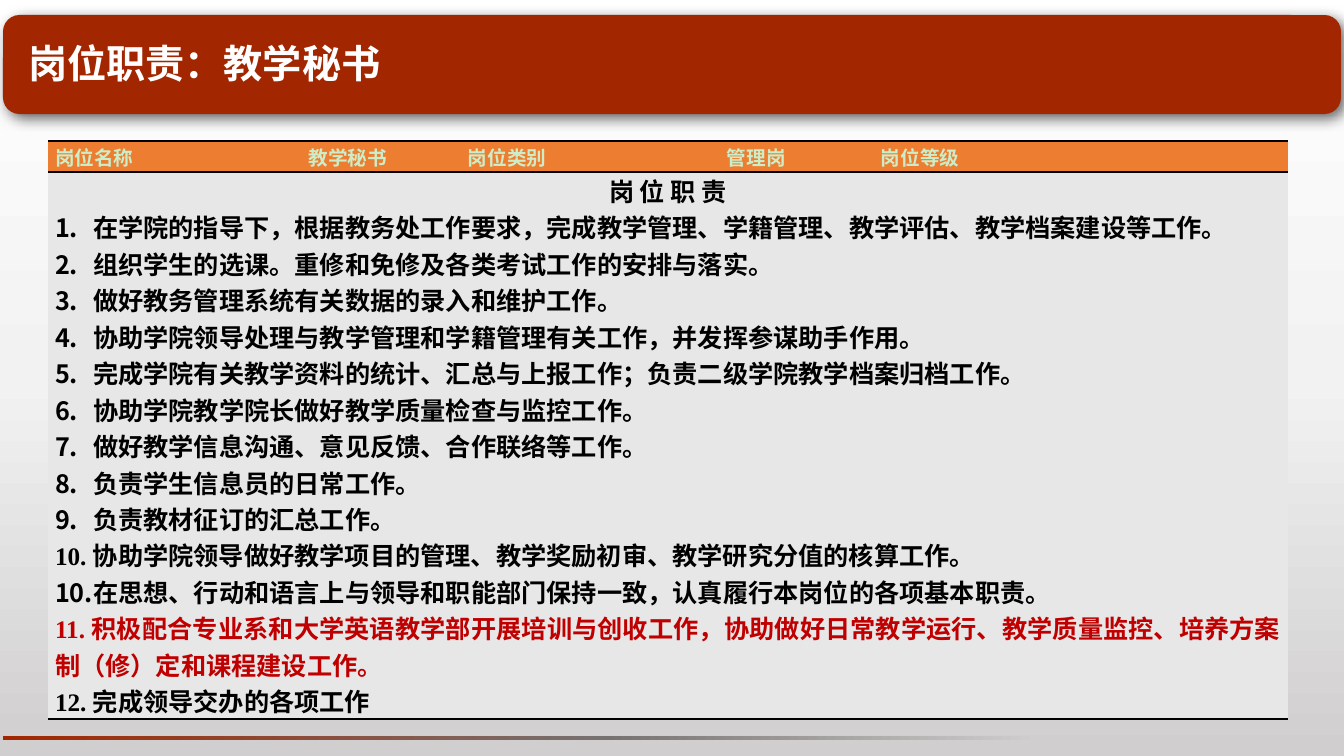
from lxml import etree
from pptx import Presentation
from pptx import util as u
from pptx.dml.color import RGBColor
from pptx.enum import shapes, text
from pptx.oxml import ns

PX = u.Emu(12192000) / 1344
SANS, SERIF = "Noto Sans CJK SC", "Times New Roman"
BRICK = RGBColor(0xA2, 0x27, 0x00)
ORANGE = RGBColor(0xED, 0x7D, 0x31)
MINT = RGBColor(0xCC, 0xED, 0xC7)
PALE = RGBColor(0xE7, 0xE7, 0xE7)
RED = RGBColor(0xC0, 0x00, 0x00)
BLACK = RGBColor(0x00, 0x00, 0x00)
WHITE = RGBColor(0xFF, 0xFF, 0xFF)
MIST = RGBColor(0xF2, 0xF2, 0xF2)
GREY = RGBColor(0x76, 0x71, 0x71)
SILVER = RGBColor(0xD0, 0xCE, 0xCE)
NO_STYLE = "{2D5ABB26-0587-4C30-8999-92F81FD0307C}"
LEFT, CENTER, JUSTIFY = text.PP_ALIGN.LEFT, text.PP_ALIGN.CENTER, text.PP_ALIGN.JUSTIFY

COLUMNS = [187, 226, 178, 235, 186, 228]
HEADER = ["岗位名称", "教学秘书", "岗位类别", "管理岗", "岗位等级", ""]
DUTIES = [
    "在学院的指导下，根据教务处工作要求，完成教学管理、学籍管理、教学评估、教学档案建设等工作。",
    "组织学生的选课。重修和免修及各类考试工作的安排与落实。",
    "做好教务管理系统有关数据的录入和维护工作。",
    "协助学院领导处理与教学管理和学籍管理有关工作，并发挥参谋助手作用。",
    "完成学院有关教学资料的统计、汇总与上报工作；负责二级学院教学档案归档工作。",
    "协助学院教学院长做好教学质量检查与监控工作。",
    "做好教学信息沟通、意见反馈、合作联络等工作。",
    "负责学生信息员的日常工作。",
    "负责教材征订的汇总工作。",
]
# Text, number the list starts at (None for a typed number), colour
CLOSING_DUTIES = [
    ("10. 协助学院领导做好教学项目的管理、教学奖励初审、教学研究分值的核算工作。", None, BLACK),
    ("在思想、行动和语言上与领导和职能部门保持一致，认真履行本岗位的各项基本职责。", 10, BLACK),
    ("11. 积极配合专业系和大学英语教学部开展培训与创收工作，协助做好日常教学运行、"
     "教学质量监控、培养方案制（修）定和课程建设工作。", None, RED),
    ("12. 完成领导交办的各项工作", None, BLACK),
]


def px(length):
    return u.Emu(round(length * PX))


def add_xml(parent, tag, **attributes):
    child = etree.SubElement(parent, ns.qn(tag))
    for name, value in attributes.items():
        child.set(name, str(value))
    return child


def set_gradient(fill, stops, angle):
    """Fill with (percent, colour) stops; the angle runs clockwise."""
    fill.gradient()
    gradient = fill._fill._gradFill
    for child in list(gradient):
        gradient.remove(child)
    stop_list = add_xml(gradient, "a:gsLst")
    for percent, color in stops:
        stop = add_xml(stop_list, "a:gs", pos=percent * 1000)
        add_xml(stop, "a:srgbClr", val=color)
    add_xml(gradient, "a:lin", ang=angle * 60000, scaled=0)


def add_run(paragraph, words, size, color, font):
    run = paragraph.add_run()
    run.text = words
    run.font.size, run.font.bold, run.font.name = u.Pt(size), True, font
    run.font.color.rgb = color
    add_xml(run._r.get_or_add_rPr(), "a:ea", typeface=SANS)


def number_paragraph(paragraph, start):
    properties = paragraph._p.get_or_add_pPr()
    properties.set("marL", str(px(38)))
    properties.set("indent", str(-px(38)))
    add_xml(properties, "a:buFont", typeface=SANS)
    add_xml(properties, "a:buAutoNum", type="arabicPeriod", startAt=start)
    add_xml(add_xml(properties, "a:tabLst"), "a:tab", pos=px(25), algn="l")


def add_plain_shape(slide, kind, left, top, width, height):
    shape = slide.shapes.add_shape(kind, px(left), px(top), px(width), px(height))
    shape.shadow.inherit = False
    shape.line.fill.background()
    return shape


def add_banner(slide, left, top, width, height):
    banner = add_plain_shape(slide, shapes.MSO_SHAPE.ROUNDED_RECTANGLE, left, top, width, height)
    banner.fill.solid()
    banner.fill.fore_color.rgb = BRICK
    effects = banner._element.spPr.find(ns.qn("a:effectLst"))
    shadow = add_xml(effects, "a:outerShdw", blurRad=u.Pt(10), dist=u.Pt(4),
                     dir=45 * 60000, algn="tl", rotWithShape=0)
    add_xml(add_xml(shadow, "a:srgbClr", val=BLACK), "a:alpha", val=60000)

    title = slide.shapes.title
    slide.shapes._spTree.append(title._element)
    title.left, title.top = px(left + 15), px(top + 3)
    title.width, title.height = px(width - 30), px(height - 4)
    frame = title.text_frame
    frame.word_wrap = True
    frame.auto_size = text.MSO_AUTO_SIZE.NONE
    frame.vertical_anchor = text.MSO_ANCHOR.MIDDLE
    paragraph = frame.paragraphs[0]
    paragraph.alignment, paragraph.line_spacing = LEFT, 0.9
    add_run(paragraph, "岗位职责：教学秘书", 28, WHITE, SANS)


def add_footer_rule(slide, left, top, width, height):
    rule = add_plain_shape(slide, shapes.MSO_SHAPE.RECTANGLE, left, top, width, height)
    set_gradient(rule.fill, [(0, BRICK), (58, GREY), (100, SILVER)], 0)


def format_cell(cell, color, border_tags):
    properties = cell._tc.get_or_add_tcPr()
    for tag in border_tags:
        border = add_xml(properties, tag, w=u.Pt(2))
        add_xml(add_xml(border, "a:solidFill"), "a:srgbClr", val=BLACK)
    cell.fill.solid()
    cell.fill.fore_color.rgb = color
    cell.margin_left = cell.margin_right = px(7)
    cell.margin_top = cell.margin_bottom = 0


def fill_duties(frame):
    heading = frame.paragraphs[0]
    heading.alignment = CENTER
    add_run(heading, "岗 位 职 责", 18, BLACK, SERIF)
    for words, start, color in [(duty, 1, BLACK) for duty in DUTIES] + CLOSING_DUTIES:
        paragraph = frame.add_paragraph()
        paragraph.alignment = JUSTIFY
        if start:
            number_paragraph(paragraph, start)
        add_run(paragraph, words, 18, color, SERIF)


def add_duty_table(slide, left, top, width, height):
    header_height = 31
    frame = slide.shapes.add_table(2, len(COLUMNS), px(left), px(top), px(width), px(height))
    table = frame.table
    table.first_row = table.horz_banding = False
    table._tbl.tblPr.find(ns.qn("a:tableStyleId")).text = NO_STYLE
    for column, column_width in zip(table.columns, COLUMNS):
        column.width = px(column_width)
    table.rows[0].height = px(header_height)
    table.rows[1].height = px(height - header_height)

    for index, words in enumerate(HEADER):
        cell = table.cell(0, index)
        format_cell(cell, ORANGE, ["a:lnT", "a:lnB"])
        format_cell(table.cell(1, index), PALE, ["a:lnT", "a:lnB"])
        cell.vertical_anchor = text.MSO_ANCHOR.MIDDLE
        paragraph = cell.text_frame.paragraphs[0]
        paragraph.alignment = CENTER if index % 2 else JUSTIFY
        if words:
            add_run(paragraph, words, 14, MINT, SERIF)

    body = table.cell(1, 0)
    body.merge(table.cell(1, len(COLUMNS) - 1))
    fill_duties(body.text_frame)


def main():
    presentation = Presentation()
    presentation.slide_width, presentation.slide_height = px(1344), px(756)
    slide = presentation.slides.add_slide(presentation.slide_layouts.get_by_name("Title Only"))
    set_gradient(slide.background.fill, [(0, WHITE), (50, MIST), (100, SILVER)], 90)
    add_banner(slide, 3, 15, 1338, 99)
    add_footer_rule(slide, 3, 736, 1036, 4)
    add_duty_table(slide, 48, 141, sum(COLUMNS), 572)
    presentation.save("out.pptx")


if __name__ == "__main__":
    main()
